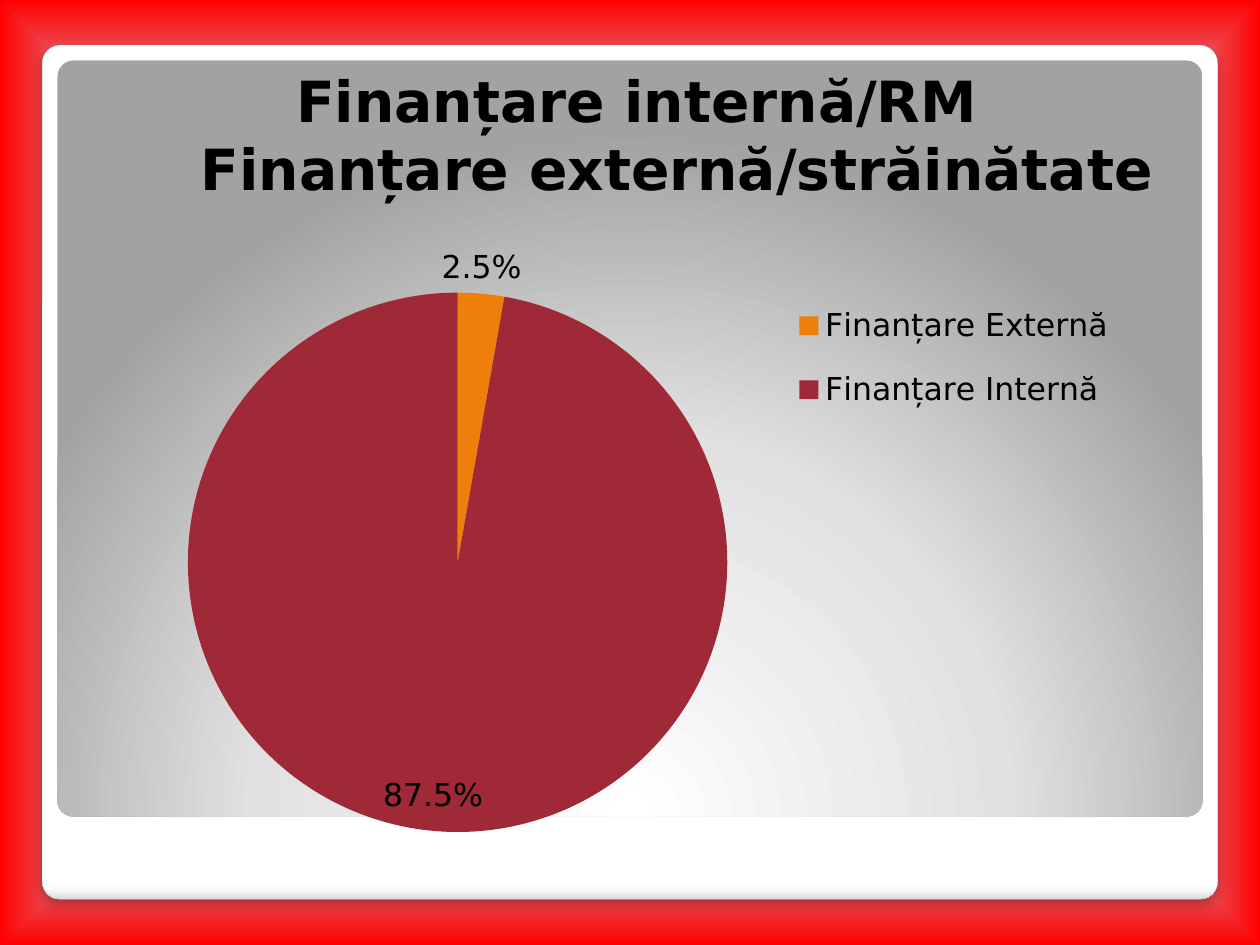
import pptx
import pptx.chart.data
import pptx.dml.color
import pptx.enum.chart
import pptx.enum.shapes
import pptx.enum.text
import pptx.oxml
import pptx.oxml.ns
import pptx.util
from pptx.util import Cm

FONT = "DejaVu Sans"
NS = pptx.oxml.ns.nsdecls("a")


def color(hex_value):
    return pptx.dml.color.RGBColor.from_string(hex_value)


def style_font(font, size, hex_value="000000", bold=False):
    font.name, font.size, font.bold = FONT, pptx.util.Pt(size), bold
    font.color.rgb = color(hex_value)


def set_gradient(fill, parent, stops, direction):
    """Fill parent with (percent, colour) stops; direction is a:lin or a:path XML."""
    fill.gradient()
    old = parent.xpath(".//a:gradFill")[0]
    gs = "".join(f'<a:gs pos="{pos * 1000}"><a:srgbClr val="{c}"/></a:gs>' for pos, c in stops)
    new = pptx.oxml.parse_xml(
        f'<a:gradFill {NS} rotWithShape="1"><a:gsLst>{gs}</a:gsLst>{direction}</a:gradFill>')
    old.getparent().replace(old, new)


def path_direction(kind, left, top, right, bottom):
    return (f'<a:path path="{kind}"><a:fillToRect l="{left * 1000}" t="{top * 1000}" '
            f'r="{right * 1000}" b="{bottom * 1000}"/></a:path>')


def add_panel(s, box, stops, direction):
    sp = s.shapes.add_shape(pptx.enum.shapes.MSO_SHAPE.ROUNDED_RECTANGLE, *box)
    sp.adjustments[0] = 0.021
    sp.shadow.inherit = False
    sp.line.fill.background()
    set_gradient(sp.fill, sp._element.spPr, stops, direction)
    return sp


def add_frame(s, left, top, width, height):
    """White card with a soft shadow and a grey panel inset in it."""
    card = add_panel(s, (left, top, width, height),
                     [(0, "FFFFFF"), (98, "FFFFFF"), (99, "F7F7F7"), (100, "DADADA")],
                     '<a:lin ang="5400000" scaled="0"/>')
    card.line.color.rgb = color("A4A4A4")
    card.line.width = pptx.util.Pt(0.16)
    effects = card._element.spPr.find(pptx.oxml.ns.qn("a:effectLst"))
    effects.append(pptx.oxml.parse_xml(
        f'<a:outerShdw {NS} blurRad="76200" dist="50800" dir="5400000" algn="tl" '
        'rotWithShape="0"><a:srgbClr val="000000"><a:alpha val="25000"/></a:srgbClr>'
        '</a:outerShdw>'))
    inset = Cm(0.31)
    add_panel(s, (left + inset, top + inset, width - 2 * inset, height - Cm(1.98)),
              [(0, "FFFFFF"), (55, "E1E1E1"), (100, "A2A2A2")],
              path_direction("circle", 50, 175, 50, -75))


def add_line(p, text, left=0, right=0, **font):
    """Write one centred line, with indents that shift it."""
    r = p.add_run()
    r.text = text
    style_font(r.font, **font)
    p.alignment = pptx.enum.text.PP_ALIGN.CENTER
    p.space_before = p.space_after = pptx.util.Pt(0)
    pPr = p._p.get_or_add_pPr()
    pPr.set("marL", str(left))
    pPr.set("marR", str(right))


def place_title(s, left, top, width, height):
    sp = s.shapes.title
    s.shapes._spTree.append(sp._element)
    sp.left, sp.top, sp.width, sp.height = left, top, width, height
    tf = sp.text_frame
    tf.word_wrap = True
    tf.auto_size = pptx.enum.text.MSO_AUTO_SIZE.NONE
    tf.vertical_anchor = pptx.enum.text.MSO_ANCHOR.BOTTOM
    add_line(tf.paragraphs[0], "Finanțare internă/RM", right=Cm(0.45), size=32.4, bold=True)
    add_line(tf.add_paragraph(), "Finanțare externă/străinătate", left=Cm(1.17),
             size=32.4, bold=True)


def set_layout(element, x, y, w, h, inner=False):
    """Give a plot area or legend a fixed place, in fractions of the chart."""
    qn = pptx.oxml.ns.qn
    for old in element.findall(qn("c:layout")):
        element.remove(old)
    target = '<c:layoutTarget val="inner"/>' if inner else ""
    parts = "".join(f'<c:{tag} val="{val}"/>' for tag, val in (
        ("xMode", "edge"), ("yMode", "edge"), ("x", x), ("y", y), ("w", w), ("h", h)))
    layout = pptx.oxml.parse_xml(
        f'<c:layout {pptx.oxml.ns.nsdecls("c")}><c:manualLayout>{target}{parts}'
        '</c:manualLayout></c:layout>')
    pos = element.find(qn("c:legendPos"))
    element.insert(0 if pos is None else 1, layout)


def add_funding_pie(s, left, top, width, height):
    data = pptx.chart.data.CategoryChartData(number_format="0.0%")
    data.categories = ["Finanțare Externă", "Finanțare Internă"]
    data.add_series("Series 1", (0.025, 0.875))
    chart = s.shapes.add_chart(pptx.enum.chart.XL_CHART_TYPE.PIE,
                               left, top, width, height, data).chart
    chart.has_title = False
    style_font(chart.font, 18)
    chart.has_legend = True
    chart.legend.position = pptx.enum.chart.XL_LEGEND_POSITION.RIGHT
    chart.legend.include_in_layout = False
    set_layout(chart.legend._element, 0.63, 0.08, 0.32, 0.25)
    plot = chart.plots[0]
    set_layout(plot._element.getparent(), 0.11, 0.1, 0.48, 0.87, inner=True)
    for i, hex_value in enumerate(("F07F09", "9F2936")):
        fill = plot.series[0].points[i].format.fill
        fill.solid()
        fill.fore_color.rgb = color(hex_value)
    plot.has_data_labels = True
    labels = plot.data_labels
    labels.show_value = True
    labels.show_percentage = False
    labels.number_format, labels.number_format_is_linked = "0.0%", False
    labels.position = pptx.enum.chart.XL_LABEL_POSITION.BEST_FIT


def main():
    prs = pptx.Presentation()
    prs.slide_width, prs.slide_height = Cm(25.4), Cm(19.05)
    s = prs.slides.add_slide(prs.slide_layouts[5])
    set_gradient(s.background.fill, s._element.cSld.find(pptx.oxml.ns.qn("p:bg")),
                 [(40, "85C2FF"), (70, "C4D6EB"), (100, "FF0000")],
                 path_direction("shape", 50, 50, 50, 50))
    add_frame(s, Cm(0.85), Cm(0.91), Cm(23.7), Cm(17.22))
    place_title(s, Cm(1.7), Cm(1.27), Cm(22.73), Cm(2.92))
    add_funding_pie(s, Cm(1.27), Cm(4.65), Cm(22.73), Cm(12.5))
    prs.save("out.pptx")


if __name__ == "__main__":
    main()
